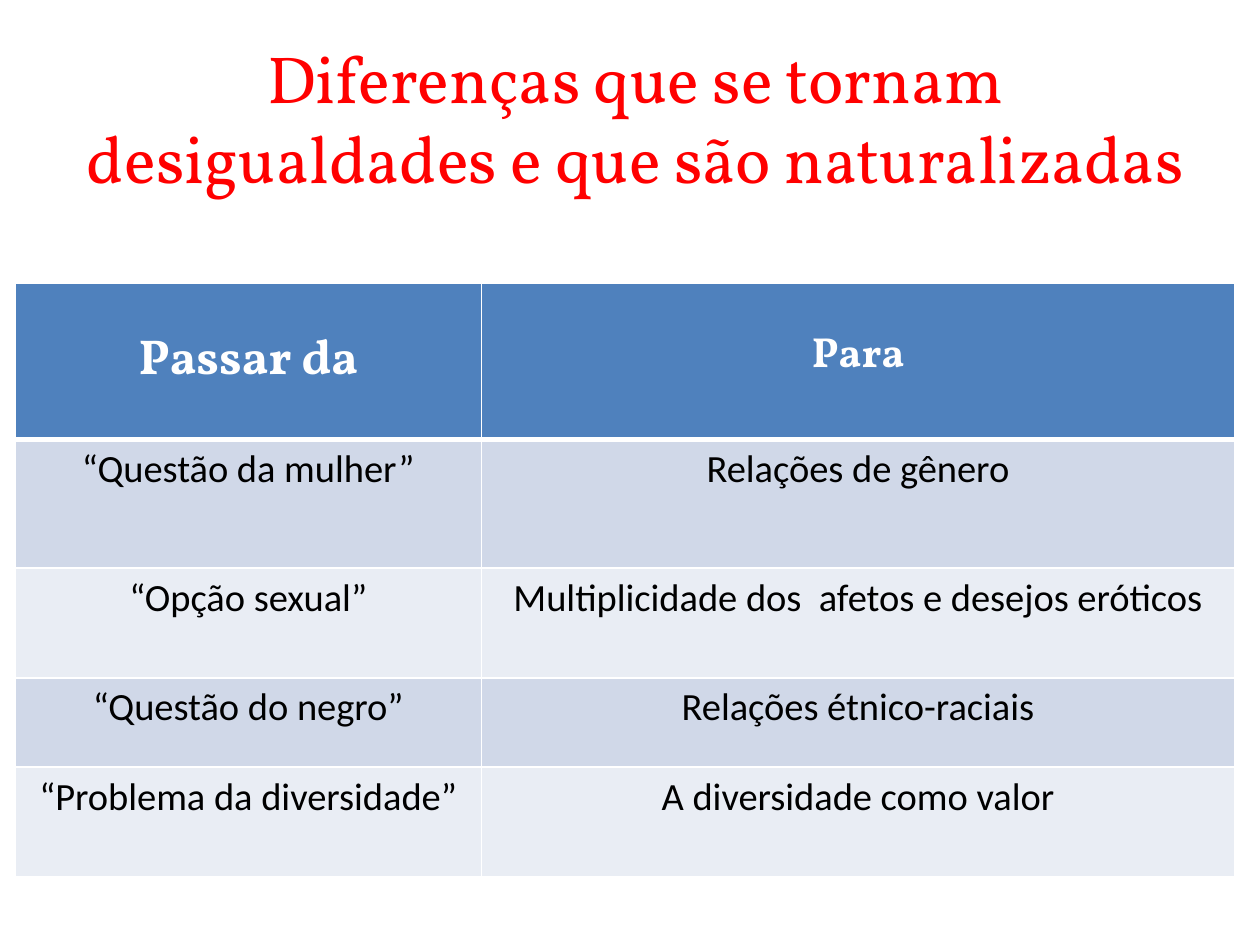
from lxml.etree import SubElement
from pptx import Presentation
from pptx.dml.color import RGBColor
from pptx.enum.text import MSO_ANCHOR, PP_ALIGN
from pptx.oxml.ns import qn
from pptx.util import Inches, Pt

WHITE = RGBColor(0xFF, 0xFF, 0xFF)
BLACK = RGBColor(0x00, 0x00, 0x00)
RED = RGBColor(0xFF, 0x00, 0x00)
BLUE = RGBColor(0x4F, 0x81, 0xBD)
BANDS = [RGBColor(0xD0, 0xD8, 0xE8), RGBColor(0xE9, 0xED, 0xF4)]

TITLE_LINES = ["Diferenças que se tornam", "desigualdades e que são naturalizadas"]
HEADERS = [("Passar da", 28), ("Para", 24)]
SHIFTS = [
    ("“Questão da mulher”", "Relações de gênero"),
    ("“Opção sexual”", "Multiplicidade dos  afetos e desejos eróticos"),
    ("“Questão do negro”", "Relações étnico-raciais"),
    ("“Problema da diversidade”", "A diversidade como valor"),
]
COLUMN_WIDTHS = [3.7, 5.98]
ROW_HEIGHTS = [1.24, 1.02, 0.87, 0.71, 0.87]


def add_span(para, text, font, size, color, bold=False):
    span = para.add_run()
    span.text = text
    span.font.name = font
    span.font.size = Pt(size)
    span.font.color.rgb = color
    span.font.bold = bold


def set_borders(cell, bottom=1, top=1):
    """Draw white borders; they must come before the fill in the cell XML."""
    properties = cell._tc.get_or_add_tcPr()
    for side, width in (("L", 1), ("R", 1), ("T", top), ("B", bottom)):
        line = SubElement(properties, qn(f"a:ln{side}"), w=str(Pt(width)))
        fill = SubElement(line, qn("a:solidFill"))
        SubElement(fill, qn("a:srgbClr"), val=str(WHITE))


def fill_cell(cell, text, font, size, color, background, bold=False):
    cell.fill.solid()
    cell.fill.fore_color.rgb = background
    para = cell.text_frame.paragraphs[0]
    para.alignment = PP_ALIGN.CENTER
    add_span(para, text, font, size, color, bold)


def add_title(page):
    title = page.shapes.title
    title.left, title.top = Inches(0.28), Inches(0.3)
    title.width, title.height = Inches(9.53), Inches(1.25)
    title.text_frame.vertical_anchor = MSO_ANCHOR.MIDDLE
    para = title.text_frame.paragraphs[0]
    para.alignment = PP_ALIGN.CENTER
    for index, line in enumerate(TITLE_LINES):
        if index:
            para.add_line_break()
        add_span(para, line, "Vollkorn", 38, RED)


def add_shift_table(page):
    table = page.shapes.add_table(
        len(ROW_HEIGHTS), len(COLUMN_WIDTHS), Inches(0.12), Inches(2.25),
        Inches(sum(COLUMN_WIDTHS)), Inches(sum(ROW_HEIGHTS))).table
    for column, width in zip(table.columns, COLUMN_WIDTHS):
        column.width = Inches(width)
    for row, height in zip(table.rows, ROW_HEIGHTS):
        row.height = Inches(height)

    for column, (text, size) in enumerate(HEADERS):
        cell = table.cell(0, column)
        set_borders(cell, bottom=3)
        cell.margin_top = Inches(0.35)
        fill_cell(cell, text, "Vollkorn", size, WHITE, BLUE, bold=True)
    for row, shift in enumerate(SHIFTS, start=1):
        for column, text in enumerate(shift):
            cell = table.cell(row, column)
            set_borders(cell, top=3 if row == 1 else 1)
            fill_cell(cell, text, "Calibri", 22, BLACK, BANDS[(row - 1) % 2])


def main():
    deck = Presentation()
    deck.slide_width, deck.slide_height = Inches(10), Inches(7.5)
    page = deck.slides.add_slide(deck.slide_layouts[5])
    add_title(page)
    add_shift_table(page)
    deck.save("out.pptx")


if __name__ == "__main__":
    main()
